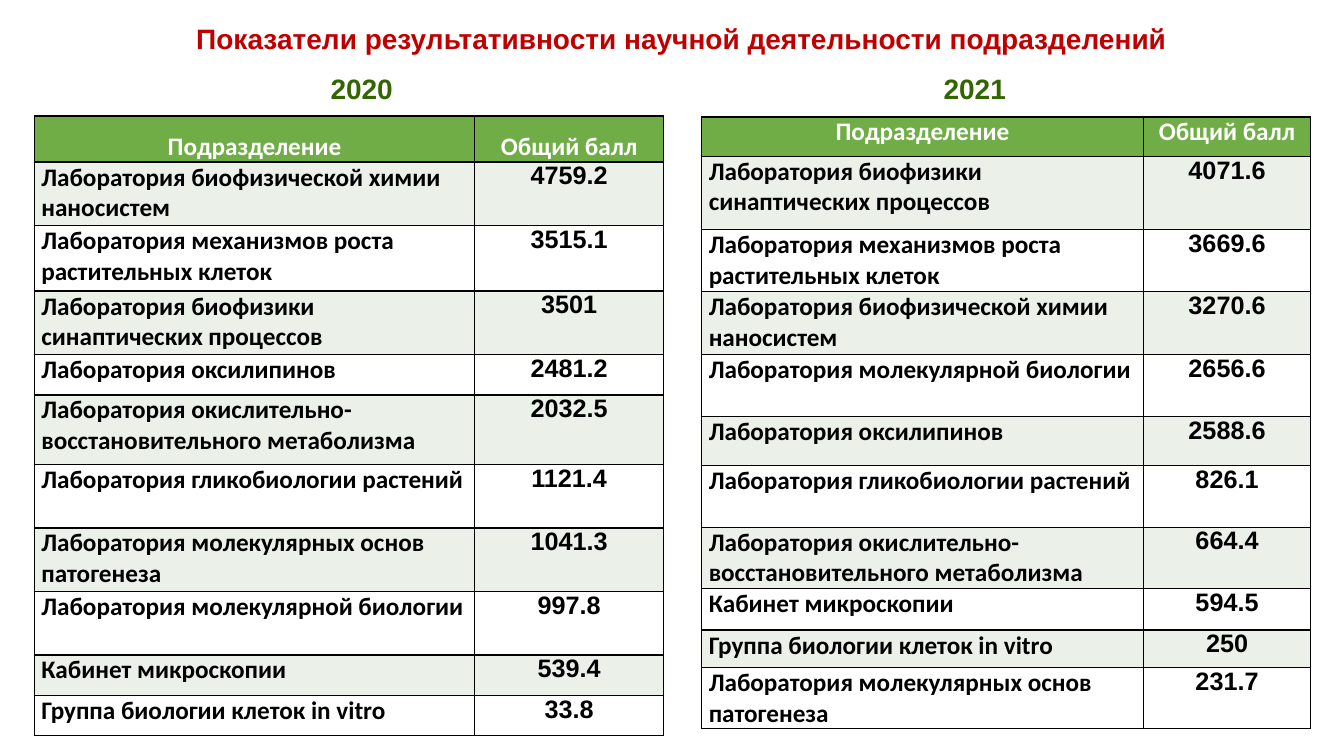
from dataclasses import dataclass

from lxml.etree import SubElement as SubEl
from pptx import Presentation
from pptx.dml.color import RGBColor as RGB
from pptx.enum.text import MSO_AUTO_SIZE as Fit, PP_ALIGN as Align
from pptx.oxml.ns import qn
from pptx.util import Inches, Pt


@dataclass(frozen=True)
class Theme:
    """Colours, fonts and type sizes of the slide."""
    title: str = "C00000"
    year: str = "336600"
    head: str = "70AD47"
    band: str = "EBF1E9"
    white: str = "FFFFFF"
    black: str = "000000"
    sans: str = "Arial"
    body: str = "Calibri"
    large: int = 20
    small: int = 18
    line: int = 1


THEME = Theme()

SYNAPSE = "Лаборатория биофизики синаптических процессов"
GROWTH = "Лаборатория механизмов роста растительных клеток"
NANO = "Лаборатория биофизической химии наносистем"
MOLBIO = "Лаборатория молекулярной биологии"
LIPIN = "Лаборатория оксилипинов"
GLYCO = "Лаборатория гликобиологии растений"
REDOX = "Лаборатория окислительно-восстановительного метаболизма"
SCOPE = "Кабинет микроскопии"
VITRO = "Группа биологии клеток in vitro"
PATHO = "Лаборатория молекулярных основ патогенеза"

SCORES_2020 = [
    (NANO, "4759.2", 0.63), (GROWTH, "3515.1", 0.65),
    (SYNAPSE, "3501", 0.63), (LIPIN, "2481.2", 0.4),
    (REDOX, "2032.5", 0.69), (GLYCO, "1121.4", 0.63),
    (PATHO, "1041.3", 0.63), (MOLBIO, "997.8", 0.63),
    (SCOPE, "539.4", 0.4), (VITRO, "33.8", 0.4),
]
SCORES_2021 = [
    (SYNAPSE, "4071.6", 0.73), (GROWTH, "3669.6", 0.61),
    (NANO, "3270.6", 0.63), (MOLBIO, "2656.6", 0.61),
    (LIPIN, "2588.6", 0.49), (GLYCO, "826.1", 0.61),
    (REDOX, "664.4", 0.61), (SCOPE, "594.5", 0.41),
    (VITRO, "250", 0.37), (PATHO, "231.7", 0.38),
]


def add_run(para, text, size, font, color):
    """Append one bold run to a paragraph."""
    run = para.add_run()
    run.text = text
    run.font.size = Pt(size)
    run.font.name = font
    run.font.bold = True
    run.font.color.rgb = RGB.from_string(color)


def add_label(slide, text, left, top, width, color, align=Align.LEFT):
    """Place a one-line heading."""
    box = slide.shapes.add_textbox(
        Inches(left), Inches(top), Inches(width), Inches(0.44))
    frame = box.text_frame
    frame.word_wrap = True
    frame.auto_size = Fit.SHAPE_TO_FIT_TEXT
    para = frame.paragraphs[0]
    para.alignment = align
    add_run(para, text, THEME.large, THEME.sans, color)


def add_edges(cell):
    """Draw a solid line on each side of a cell."""
    props = cell._tc.get_or_add_tcPr()
    for side in ("a:lnL", "a:lnR", "a:lnT", "a:lnB"):
        line = SubEl(props, qn(side), w=str(Pt(THEME.line)))
        fill = SubEl(line, qn("a:solidFill"))
        SubEl(fill, qn("a:srgbClr"), val=THEME.black)


def fill_cell(cell, text, font, color, fill, align):
    """Style a cell, write its text and return the paragraph."""
    add_edges(cell)
    cell.fill.solid()
    cell.fill.fore_color.rgb = RGB.from_string(fill)
    cell.margin_left = cell.margin_right = Inches(0.07)
    cell.margin_top = cell.margin_bottom = Inches(0)
    para = cell.text_frame.paragraphs[0]
    para.alignment = align
    add_run(para, text, THEME.small, font, color)
    return para


def add_scores(slide, left, top, widths, head, scores, roomy=False):
    """Build the table of units and scores for one year."""
    heights = [head] + [high for _, _, high in scores]
    table = slide.shapes.add_table(
        len(heights), 2, Inches(left), Inches(top),
        Inches(sum(widths)), Inches(sum(heights))).table
    for col, width in zip(table.columns, widths):
        col.width = Inches(width)
    for row, high in zip(table.rows, heights):
        row.height = Inches(high)
    for col, text in enumerate(("Подразделение", "Общий балл")):
        para = fill_cell(table.cell(0, col), text, THEME.body,
                         THEME.white, THEME.head, Align.CENTER)
        if roomy:
            para.line_spacing = 1.5
            para.space_after = Pt(10)
    for row, (unit, score, _) in enumerate(scores, 1):
        fill = THEME.band if row % 2 else THEME.white
        fill_cell(table.cell(row, 0), unit, THEME.body,
                  THEME.black, fill, Align.LEFT)
        fill_cell(table.cell(row, 1), score, THEME.sans,
                  THEME.black, fill, Align.CENTER)


def main():
    """Build and save the slide."""
    deck = Presentation()
    deck.slide_width, deck.slide_height = Inches(13.33), Inches(7.5)
    slide = deck.slides.add_slide(deck.slide_layouts[6])
    add_scores(slide, 6.96, 1.16, (4.38, 1.66), 0.39, SCORES_2021)
    add_scores(slide, 0.34, 1.15, (4.37, 1.87), 0.4, SCORES_2020, roomy=True)
    add_label(slide, "2020", 3.18, 0.66, 1.6, THEME.year)
    add_label(slide, "2021", 9.26, 0.66, 1.6, THEME.year)
    add_label(
        slide,
        "Показатели результативности научной деятельности подразделений",
        1.67, 0.16, 10.18, THEME.title, Align.CENTER)
    deck.save("out.pptx")


if __name__ == "__main__":
    main()
